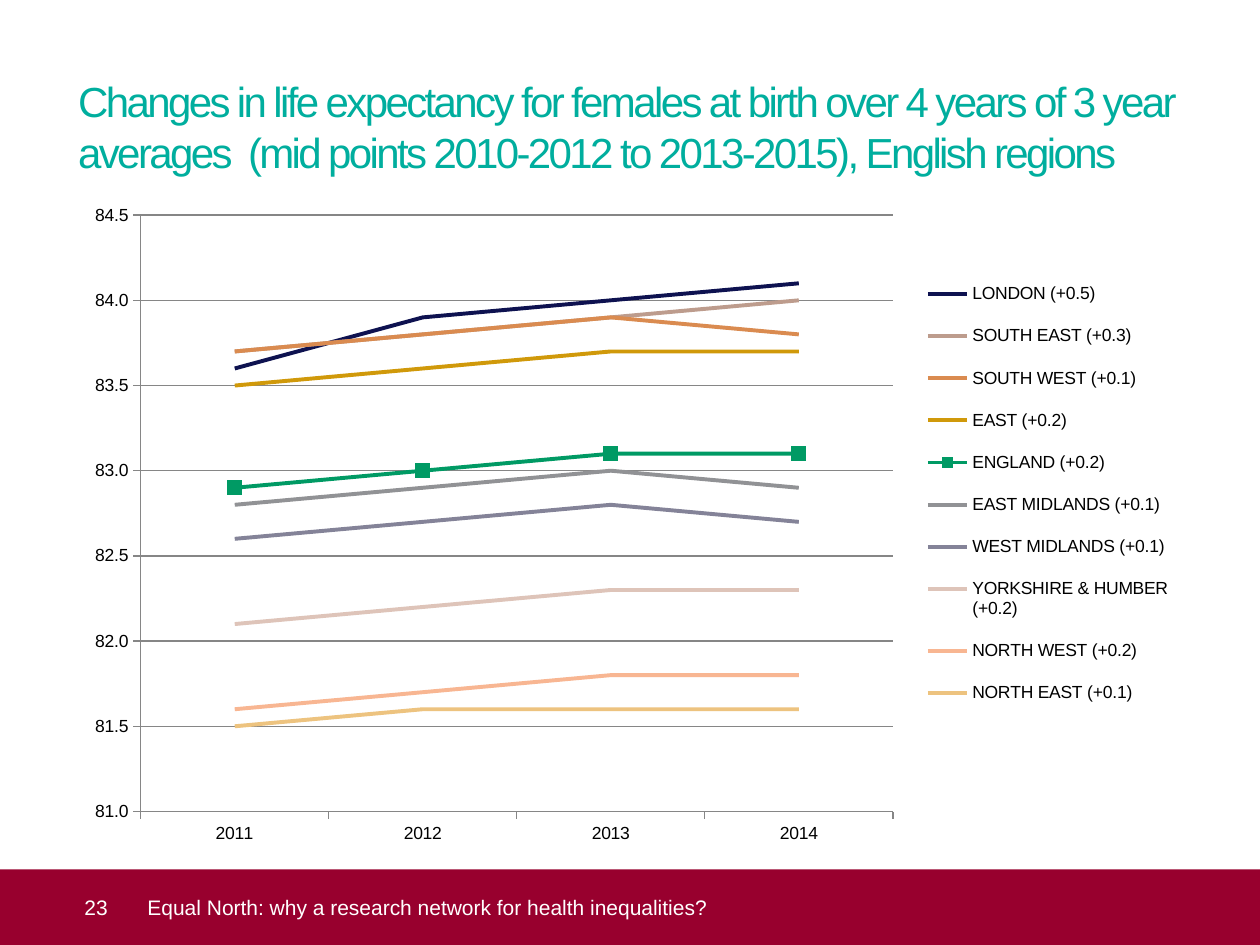
"""Builds the slide on female life expectancy in the English regions."""
from pptx import Presentation
from pptx.chart.data import CategoryChartData
from pptx.dml.color import RGBColor
from pptx.enum.chart import XL_CHART_TYPE, XL_LEGEND_POSITION, XL_MARKER_STYLE, XL_TICK_MARK
from pptx.enum.shapes import MSO_SHAPE
from pptx.enum.text import MSO_ANCHOR, PP_ALIGN
from pptx.oxml import parse_xml
from pptx.oxml.ns import nsdecls
from pptx.util import Inches, Pt


def paint(fmt, color):
    fmt.solid()
    fmt.fore_color.rgb = RGBColor.from_string(color)


def write(shape, text, size, color, left=0, anchor=MSO_ANCHOR.MIDDLE):
    frame = shape.text_frame
    frame.word_wrap = True
    frame.vertical_anchor = anchor
    frame.margin_left = Inches(left)
    frame.margin_top = frame.margin_right = frame.margin_bottom = 0
    para = frame.paragraphs[0]
    para.text = text
    para.alignment = PP_ALIGN.LEFT
    para.font.name = "Arial"
    para.font.size = Pt(size)
    para.font.color.rgb = RGBColor.from_string(color)
    return para


deck = Presentation()
deck.slide_width, deck.slide_height = Inches(10), Inches(7.5)
slide = deck.slides.add_slide(deck.slide_layouts[5])
shapes = slide.shapes

title = shapes.title
title.left, title.top = Inches(0.62), Inches(0.6)
title.width, title.height = Inches(8.78), Inches(0.94)
para = write(
    title,
    "Changes in life expectancy for females at birth over 4 years of 3 year "
    "averages  (mid points 2010-2012 to 2013-2015), English regions",
    24, "00AE9E", anchor=MSO_ANCHOR.TOP)
para.line_spacing = Pt(29)
para.runs[0].font._element.set("spc", "-150")

band = shapes.add_shape(MSO_SHAPE.RECTANGLE, 0, Inches(6.9), Inches(10), Inches(0.6))
band.shadow.inherit = False
band.line.fill.background()
paint(band.fill, "98002E")
write(band, "23", 12, "FFFFFF", left=0.67)

footer = shapes.add_textbox(Inches(0.98), Inches(6.9), Inches(8.82), Inches(0.6))
write(footer, "Equal North: why a research network for health inequalities?",
      12, "FFFFFF", left=0.19)

regions = [
    ("LONDON (+0.5)", "0E1250", (83.6, 83.9, 84, 84.1)),
    ("SOUTH EAST (+0.3)", "BD9C8D", (83.7, 83.8, 83.9, 84)),
    ("SOUTH WEST (+0.1)", "DA8B50", (83.7, 83.8, 83.9, 83.8)),
    ("EAST (+0.2)", "D0990A", (83.5, 83.6, 83.7, 83.7)),
    ("ENGLAND (+0.2)", "009A64", (82.9, 83, 83.1, 83.1)),
    ("EAST MIDLANDS (+0.1)", "919295", (82.8, 82.9, 83, 82.9)),
    ("WEST MIDLANDS (+0.1)", "848398", (82.6, 82.7, 82.8, 82.7)),
    ("YORKSHIRE & HUMBER (+0.2)", "DEC4B9", (82.1, 82.2, 82.3, 82.3)),
    ("NORTH WEST (+0.2)", "F8B692", (81.6, 81.7, 81.8, 81.8)),
    ("NORTH EAST (+0.1)", "EDC37F", (81.5, 81.6, 81.6, 81.6)),
]
data = CategoryChartData(number_format="0.0")
data.categories = ["2011", "2012", "2013", "2014"]
for name, color, values in regions:
    data.add_series(name, values)
chart = shapes.add_chart(XL_CHART_TYPE.LINE_MARKERS, Inches(0.59), Inches(1.55),
                         Inches(8.78), Inches(5.26), data).chart
chart.has_title = False
chart.font.name = "Arial"
chart.font.size = Pt(10)
chart.font.color.rgb = RGBColor.from_string("000000")

plot = chart.plots[0]
plot.vary_by_categories = False
for line, (name, color, values) in zip(plot.series, regions):
    line.smooth = False
    line.format.line.width = Pt(2.25)
    paint(line.format.line.fill, color)
    line.marker.style = XL_MARKER_STYLE.NONE
    if name.startswith("ENGLAND"):
        line.marker.style = XL_MARKER_STYLE.SQUARE
        line.marker.size = 8
        paint(line.marker.format.fill, color)
        paint(line.marker.format.line.fill, color)

scale = chart.value_axis
scale.minimum_scale, scale.maximum_scale, scale.major_unit = 81, 84.5, 0.5
scale.has_major_gridlines = True
scale.tick_labels.number_format = "0.0"
scale.tick_labels.number_format_is_linked = False
for axis in (scale, chart.category_axis):
    axis.major_tick_mark = XL_TICK_MARK.OUTSIDE
    paint(axis.format.line.fill, "868686")
paint(scale.major_gridlines.format.line.fill, "868686")

chart.has_legend = True
legend = chart.legend
legend.position = XL_LEGEND_POSITION.RIGHT
legend.include_in_layout = False

area = chart._chartSpace.chart.plotArea
key = legend._element
for old in area.findall("{*}layout") + key.findall("{*}layout"):
    old.getparent().remove(old)
for part, spot, inner, box in (
        (area, 0, '<c:layoutTarget val="inner"/>', (0.06, 0.03, 0.68, 0.9)),
        (key, 1, "", (0.76, 0.1, 0.24, 0.7))):
    modes = '<c:xMode val="edge"/><c:yMode val="edge"/>'
    sides = "".join(f'<c:{side} val="{size}"/>' for side, size in zip("xywh", box))
    part.insert(spot, parse_xml(
        f'<c:layout {nsdecls("c")}><c:manualLayout>{inner}{modes}{sides}'
        "</c:manualLayout></c:layout>"))

deck.save("out.pptx")
